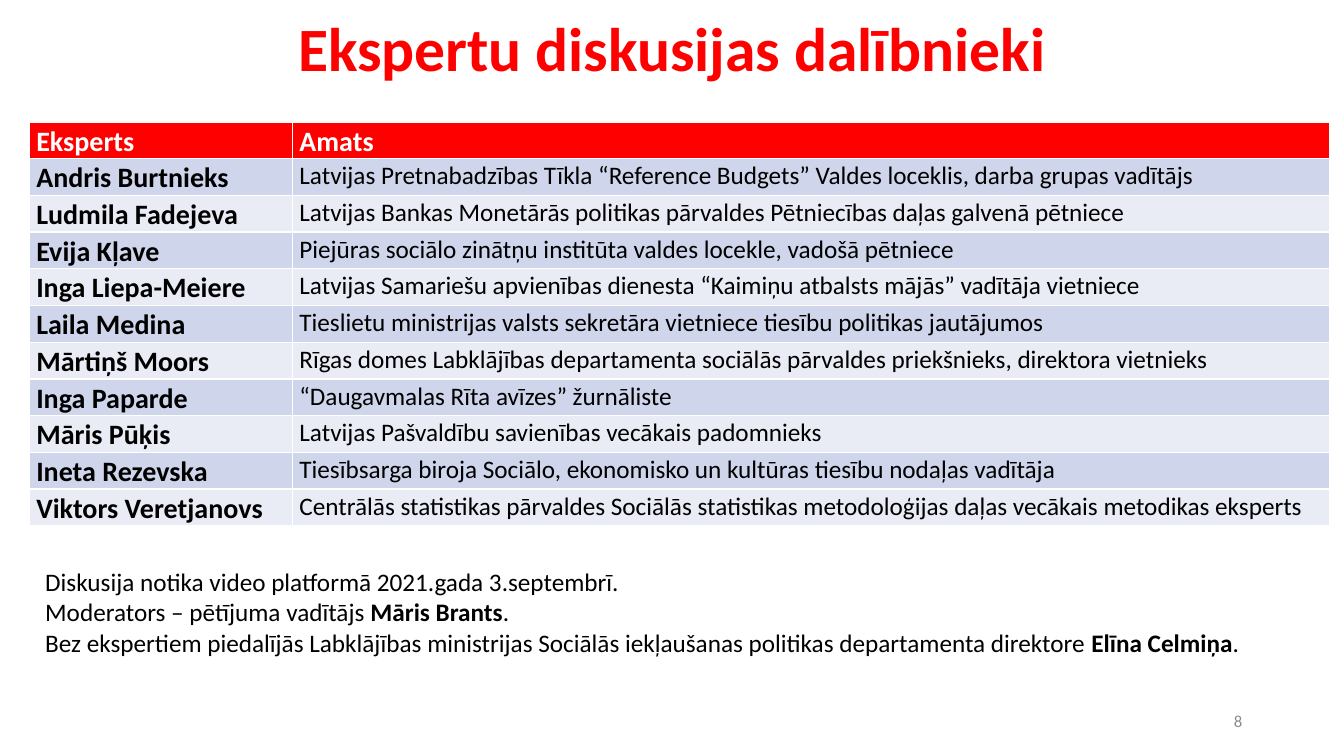
from dataclasses import dataclass

from pptx import Presentation
from pptx.dml.color import RGBColor
from pptx.enum.text import MSO_ANCHOR as Anchor, MSO_AUTO_SIZE as AutoSize, PP_ALIGN as Align
from pptx.slide import Slide
from pptx.text.text import TextFrame
from pptx.util import Emu, Pt

PX = 9144  # one px is a hundredth of an inch


@dataclass(frozen=True)
class Theme:
    font: str = "Calibri"
    accent: str = "FF0000"
    text: str = "000000"
    on_accent: str = "FFFFFF"
    muted: str = "8C8C8C"
    bands: tuple[str, str] = ("CFD5EA", "E9EBF5")
    title_size: int = 44
    name_size: int = 20
    body_size: int = 18
    number_size: int = 12


@dataclass(frozen=True)
class Box:
    left: int
    top: int
    width: int
    height: int

    def emu(self) -> tuple[Emu, ...]:
        return tuple(Emu(side * PX) for side in (self.left, self.top, self.width, self.height))


@dataclass(frozen=True)
class Span:
    text: str
    bold: bool = False


@dataclass(frozen=True)
class Expert:
    name: str
    position: str


THEME = Theme()
PAGE_WIDTH, PAGE_HEIGHT = 1333, 750
TITLE_BOX = Box(92, 0, 1150, 102)
TABLE_BOX = Box(29, 121, 1290, 396)
COLUMN_WIDTHS = (261, 1029)
CELL_INSET = 7
NOTES_BOX = Box(35, 557, 1278, 101)
NUMBER_BOX = Box(942, 695, 300, 40)

EXPERTS = (
    Expert("Andris Burtnieks", "Latvijas Pretnabadzības Tīkla “Reference Budgets” Valdes loceklis, darba grupas vadītājs"),
    Expert("Ludmila Fadejeva", "Latvijas Bankas Monetārās politikas pārvaldes Pētniecības daļas galvenā pētniece"),
    Expert("Evija Kļave", "Piejūras sociālo zinātņu institūta valdes locekle, vadošā pētniece"),
    Expert("Inga Liepa-Meiere", "Latvijas Samariešu apvienības dienesta “Kaimiņu atbalsts mājās” vadītāja vietniece"),
    Expert("Laila Medina", "Tieslietu ministrijas valsts sekretāra vietniece tiesību politikas jautājumos"),
    Expert("Mārtiņš Moors", "Rīgas domes Labklājības departamenta sociālās pārvaldes priekšnieks, direktora vietnieks"),
    Expert("Inga Paparde", "“Daugavmalas Rīta avīzes” žurnāliste"),
    Expert("Māris Pūķis", "Latvijas Pašvaldību savienības vecākais padomnieks"),
    Expert("Ineta Rezevska", "Tiesībsarga biroja Sociālo, ekonomisko un kultūras tiesību nodaļas vadītāja"),
    Expert("Viktors Veretjanovs", "Centrālās statistikas pārvaldes Sociālās statistikas metodoloģijas daļas vecākais metodikas eksperts"),
)

NOTES = (
    (Span("Diskusija notika video platformā 2021.gada 3.septembrī."),),
    (Span("Moderators – pētījuma vadītājs "), Span("Māris Brants", True), Span(".")),
    (
        Span("Bez ekspertiem piedalījās Labklājības ministrijas Sociālās iekļaušanas politikas departamenta direktore "),
        Span("Elīna Celmiņa", True),
        Span("."),
    ),
)


def write(
    frame: TextFrame,
    *lines: tuple[Span, ...],
    size: int,
    color: str = THEME.text,
    align: Align = Align.LEFT,
    spacing: float = 1.0,
    anchor: Anchor = Anchor.TOP,
) -> None:
    """Fill a text frame with one paragraph for each line of spans."""
    frame.word_wrap = True
    frame.vertical_anchor = anchor
    for index, line in enumerate(lines):
        para = frame.add_paragraph() if index else frame.paragraphs[0]
        para.alignment = align
        para.line_spacing = spacing
        for span in line:
            run = para.add_run()
            run.text = span.text
            run.font.name = THEME.font
            run.font.size = Pt(size)
            run.font.bold = span.bold
            run.font.color.rgb = RGBColor.from_string(color)


def add_title(page: Slide, text: str) -> None:
    title = page.shapes.title
    title.left, title.top, title.width, title.height = TITLE_BOX.emu()
    title.text_frame.auto_size = AutoSize.NONE
    write(title.text_frame, (Span(text, True),), size=THEME.title_size, color=THEME.accent,
          align=Align.CENTER, spacing=0.9, anchor=Anchor.MIDDLE)


def add_expert_table(page: Slide) -> None:
    rows = (Expert("Eksperts", "Amats"), *EXPERTS)
    table = page.shapes.add_table(len(rows), len(COLUMN_WIDTHS), *TABLE_BOX.emu()).table
    for column, width in zip(table.columns, COLUMN_WIDTHS):
        column.width = Emu(width * PX)

    for row_index, expert in enumerate(rows):
        is_header = row_index == 0
        fill = THEME.accent if is_header else THEME.bands[(row_index - 1) % 2]
        for column_index, text in enumerate((expert.name, expert.position)):
            strong = is_header or column_index == 0
            cell = table.cell(row_index, column_index)
            cell.fill.solid()
            cell.fill.fore_color.rgb = RGBColor.from_string(fill)
            cell.margin_left = cell.margin_right = Emu(CELL_INSET * PX)
            cell.margin_top = cell.margin_bottom = 0
            write(cell.text_frame, (Span(text, strong),), spacing=1.07,
                  size=THEME.name_size if strong else THEME.body_size,
                  color=THEME.on_accent if is_header else THEME.text)


def main() -> None:
    deck = Presentation()
    deck.slide_width, deck.slide_height = Emu(PAGE_WIDTH * PX), Emu(PAGE_HEIGHT * PX)
    page = deck.slides.add_slide(deck.slide_layouts[5])  # title only

    add_title(page, "Ekspertu diskusijas dalībnieki")
    add_expert_table(page)

    # Remarks below the table
    notes = page.shapes.add_textbox(*NOTES_BOX.emu())
    write(notes.text_frame, *NOTES, size=THEME.body_size)

    # Page number
    number = page.shapes.add_textbox(*NUMBER_BOX.emu())
    write(number.text_frame, (Span("8"),), size=THEME.number_size, color=THEME.muted,
          align=Align.RIGHT, anchor=Anchor.MIDDLE)

    deck.save("out.pptx")


if __name__ == "__main__":
    main()
